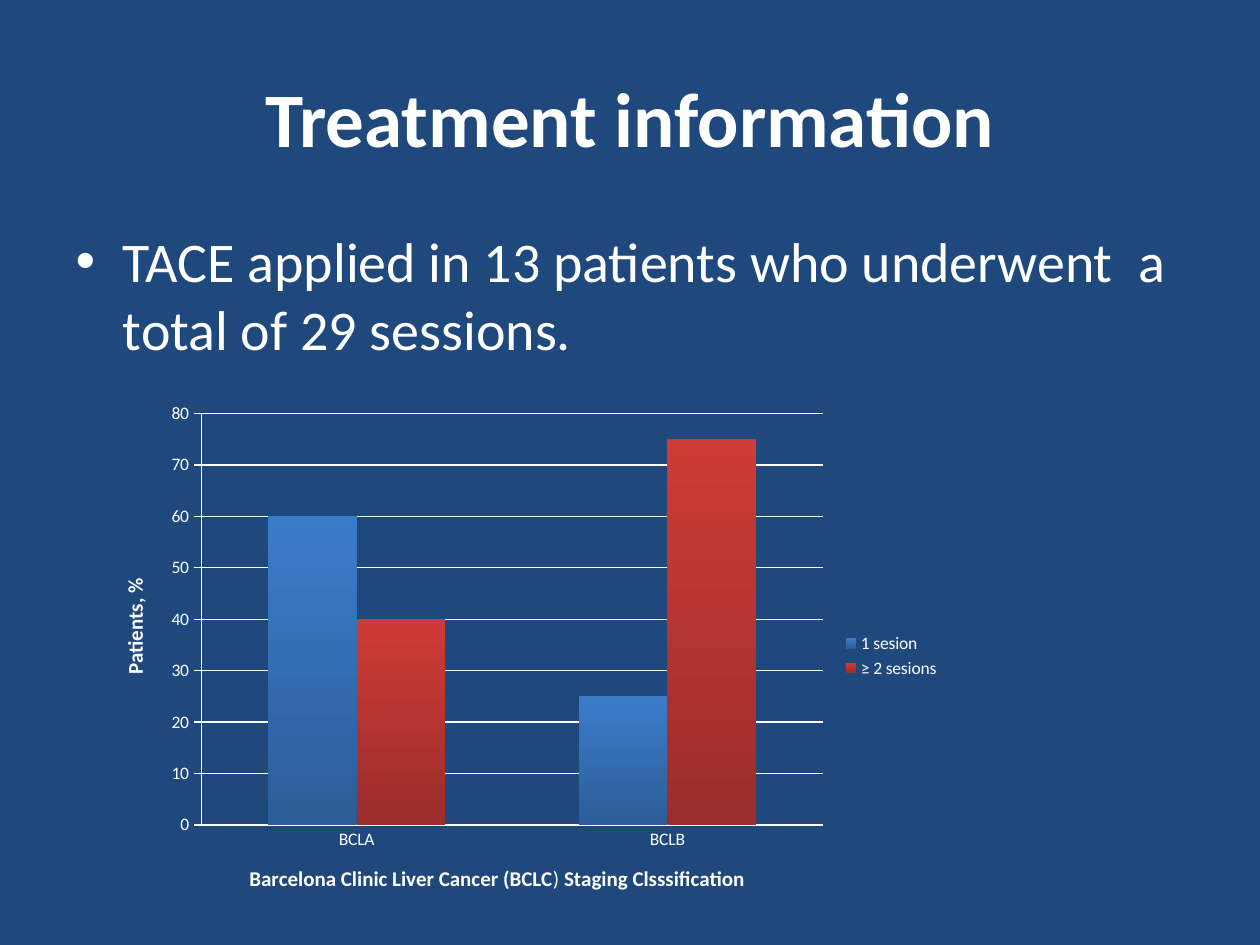
from pptx import Presentation
from pptx.chart.data import CategoryChartData
from pptx.dml.color import RGBColor
from pptx.enum.chart import XL_CHART_TYPE as Chart, XL_LEGEND_POSITION as Legend, XL_TICK_MARK as Tick
from pptx.enum.text import MSO_ANCHOR as Anchor, PP_ALIGN as Align
from pptx.util import Inches, Pt

FONT = "Calibri"
COLORS = {"background": "1F497D", "text": "FFFFFF"}
CATEGORIES = ["BCLA", "BCLB"]
# name, values, bottom colour, top colour
SERIES = [
    ("1 sesion", (60, 25), "2C5D98", "3A7CCB"),
    ("≥ 2 sesions", (40, 75), "9B2D2A", "CE3B37"),
]


def rgb(name):
    return RGBColor.from_string(COLORS[name])


def format_font(font, size, **values):
    for key, value in {"name": FONT, "size": Pt(size), **values}.items():
        setattr(font, key, value)
    font.color.rgb = rgb("text")


def place(sp, left, top, width, height):
    box = {"left": left, "top": top, "width": width, "height": height}
    for key, value in box.items():
        setattr(sp, key, Inches(value))


def fill_placeholder(sp, box, text, size, anchor, align, bold=False):
    place(sp, *box)
    tf = sp.text_frame
    tf.word_wrap = True
    tf.vertical_anchor = anchor
    p = tf.paragraphs[0]
    p.alignment = align
    r = p.add_run()
    r.text = text
    format_font(r.font, size, bold=bold)


def white_line(line):
    line.color.rgb = rgb("text")
    line.width = Pt(0.75)


def add_axis_title(axis, parts):
    """Write (text, bold) parts as the title of an axis."""
    p = axis.axis_title.text_frame.paragraphs[0]
    for text, bold in parts:
        r = p.add_run()
        r.text = text
        format_font(r.font, 12, bold=bold)


def shade_series(series, bottom, top):
    fill = series.format.fill
    fill.gradient()
    fill.gradient_angle = 90
    for stop, color in zip(fill.gradient_stops, (bottom, top)):
        stop.color.rgb = RGBColor.from_string(color)
    series.invert_if_negative = False


def add_sessions_chart(slide):
    data = CategoryChartData()
    data.categories = CATEGORIES
    for name, values, *_ in SERIES:
        data.add_series(name, values)
    box = [Inches(v) for v in (0.75, 3.12, 6.81, 4.17)]
    chart = slide.shapes.add_chart(Chart.COLUMN_CLUSTERED, *box, data).chart
    format_font(chart.font, 10)
    chart.has_title = False
    chart.has_legend = True
    chart.legend.position = Legend.RIGHT
    chart.legend.include_in_layout = False

    plot = chart.plots[0]
    plot.gap_width = 150
    plot.overlap = 0
    plot.vary_by_categories = False
    for series, (_, _, bottom, top) in zip(plot.series, SERIES):
        shade_series(series, bottom, top)

    cat, val = chart.category_axis, chart.value_axis
    for axis, tick in ((cat, Tick.NONE), (val, Tick.CROSS)):
        axis.major_tick_mark = tick
        axis.minor_tick_mark = Tick.NONE
        white_line(axis.format.line)
    val.minimum_scale, val.maximum_scale, val.major_unit = 0, 80, 10
    val.has_major_gridlines = True
    white_line(val.major_gridlines.format.line)
    add_axis_title(cat, [("Barcelona Clinic Liver Cancer (BCLC", True), (")", False),
                         (" Staging Clsssification", True)])
    add_axis_title(val, [("Patients, %", True)])


def main():
    prs = Presentation()
    prs.slide_width, prs.slide_height = Inches(10), Inches(7.5)
    slide = prs.slides.add_slide(prs.slide_layouts[1])
    slide.background.fill.solid()
    slide.background.fill.fore_color.rgb = rgb("background")
    title, body = slide.placeholders
    fill_placeholder(title, (0.5, 0.3, 9, 1.25), "Treatment information",
                     44, Anchor.MIDDLE, Align.CENTER, bold=True)
    fill_placeholder(body, (0.5, 1.75, 9, 1.33),
                     "TACE applied in 13 patients who underwent  a total of 29 sessions.",
                     32, Anchor.TOP, Align.LEFT)
    add_sessions_chart(slide)
    prs.save("out.pptx")


if __name__ == "__main__":
    main()
